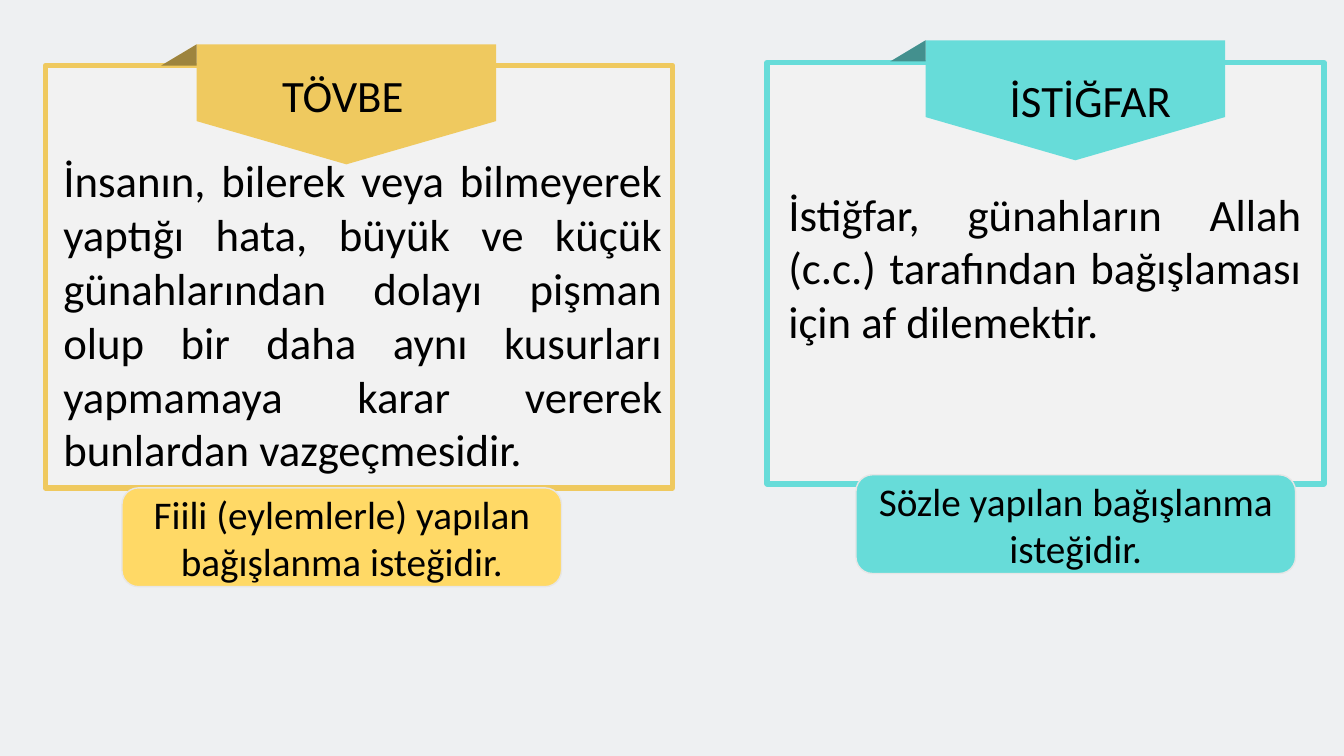
"""Build a slide that sets tövbe and istiğfar side by side."""
from dataclasses import dataclass

from lxml.etree import SubElement
from pptx import Presentation
from pptx.dml.color import RGBColor
from pptx.enum.shapes import MSO_SHAPE as Preset
from pptx.enum.text import MSO_ANCHOR as Anchor, PP_ALIGN as Align
from pptx.oxml.ns import qn
from pptx.shapes.autoshape import Shape
from pptx.slide import Slide
from pptx.text.text import TextFrame
from pptx.util import Inches, Pt


@dataclass(frozen=True)
class Theme:
    """Colours, font and type sizes of the slide."""
    backdrop: str = "EEF0F2"
    panel: str = "F2F2F2"
    gold: str = "EFC95F"
    light_gold: str = "FFD966"
    turquoise: str = "67DCD9"
    hairline: str = "E7E6E6"
    ink: str = "000000"
    font: str = "Calibri"
    body_size: int = 32
    summary_size: int = 28
    frame_width: int = 4
    hairline_width: int = 1
    fold_opacity: int = 34


@dataclass(frozen=True)
class Box:
    """A rectangle in inches."""
    left: float
    top: float
    width: float
    height: float

    def lengths(self) -> tuple[Inches, ...]:
        """Return the four measures as lengths."""
        return tuple(Inches(n) for n in (self.left, self.top, self.width, self.height))


@dataclass(frozen=True)
class Concept:
    """One framed term with its ribbon, definition and summary."""
    term: str
    definition: str
    summary: str
    color: str
    summary_color: str
    frame: Box
    fold: Box
    term_box: Box
    definition_box: Box
    summary_box: Box


THEME = Theme()
RIBBON_WIDTH, RIBBON_HEIGHT, RIBBON_POINT = 2.97, 1.19, 0.36

CONCEPTS = (
    Concept(
        "TÖVBE",
        "İnsanın, bilerek veya bilmeyerek yaptığı hata, büyük ve küçük günahlarından dolayı "
        "pişman olup bir daha aynı kusurları yapmamaya karar vererek bunlardan vazgeçmesidir.",
        "Fiili (eylemlerle) yapılan bağışlanma isteğidir.",
        THEME.gold, THEME.light_gold,
        Box(0.45, 0.65, 6.22, 4.19), Box(1.6, 0.44, 0.35, 0.21),
        Box(2.57, 0.62, 1.66, 0.64), Box(0.53, 1.47, 6.14, 3.33), Box(1.21, 4.84, 4.36, 0.98),
    ),
    Concept(
        "İSTİĞFAR",
        "İstiğfar, günahların Allah (c.c.) tarafından bağışlaması için af dilemektir.",
        "Sözle yapılan bağışlanma isteğidir.",
        THEME.turquoise, THEME.turquoise,
        Box(7.61, 0.62, 5.52, 4.18), Box(8.83, 0.4, 0.35, 0.21),
        Box(9.82, 0.67, 1.99, 0.64), Box(7.72, 1.8, 5.29, 1.72), Box(8.49, 4.71, 4.36, 0.98),
    ),
)


def add_filled(slide: Slide, preset: Preset, box: Box, fill: str,
               line: str | None = None, line_width: int = 0) -> Shape:
    """Add a preset shape with a flat fill and an optional outline."""
    shape = slide.shapes.add_shape(preset, *box.lengths())
    shape.shadow.inherit = False
    shape.fill.solid()
    shape.fill.fore_color.rgb = RGBColor.from_string(fill)
    if line:
        shape.line.color.rgb = RGBColor.from_string(line)
        shape.line.width = Pt(line_width)
    else:
        shape.line.fill.background()
    return shape


def write(frame: TextFrame, wording: str, size: int, align: Align) -> None:
    """Write one run of text into a wrapping text frame."""
    frame.word_wrap = True
    paragraph = frame.paragraphs[0]
    paragraph.alignment = align
    run = paragraph.add_run()
    run.text = wording
    run.font.size = Pt(size)
    run.font.name = THEME.font
    run.font.color.rgb = RGBColor.from_string(THEME.ink)


def add_text(slide: Slide, box: Box, wording: str, align: Align) -> None:
    """Add a text box at body size."""
    write(slide.shapes.add_textbox(*box.lengths()).text_frame, wording, THEME.body_size, align)


def add_ribbon(slide: Slide, fold: Box, color: str) -> None:
    """Add the downward ribbon and its shaded fold."""
    center_x = fold.left + fold.width + RIBBON_WIDTH / 2
    center_y = fold.top + RIBBON_HEIGHT / 2
    unrotated = Box(center_x - RIBBON_HEIGHT / 2, center_y - RIBBON_WIDTH / 2,
                    RIBBON_HEIGHT, RIBBON_WIDTH)
    ribbon = add_filled(slide, Preset.PENTAGON, unrotated, color)
    ribbon.adjustments[0] = RIBBON_POINT
    ribbon.rotation = 90
    for fill, opacity in ((color, 100), (THEME.ink, THEME.fold_opacity)):
        triangle = add_filled(slide, Preset.RIGHT_TRIANGLE, fold, fill)
        properties = triangle._element.spPr
        properties.find(qn("a:xfrm")).set("flipH", "1")
        if opacity < 100:
            shade = properties.find(qn("a:solidFill")).find(qn("a:srgbClr"))
            SubElement(shade, qn("a:alpha")).set("val", str(opacity * 1000))


def add_panel(slide: Slide, concept: Concept) -> None:
    """Add the frame, ribbon and term of a concept."""
    add_filled(slide, Preset.RECTANGLE, concept.frame, THEME.panel,
               concept.color, THEME.frame_width)
    add_ribbon(slide, concept.fold, concept.color)
    add_text(slide, concept.term_box, concept.term, Align.CENTER)


def add_summary(slide: Slide, concept: Concept) -> None:
    """Add the rounded summary of a concept."""
    summary = add_filled(slide, Preset.ROUNDED_RECTANGLE, concept.summary_box,
                         concept.summary_color, THEME.hairline, THEME.hairline_width)
    summary.text_frame.vertical_anchor = Anchor.MIDDLE
    write(summary.text_frame, concept.summary, THEME.summary_size, Align.CENTER)


def main() -> None:
    """Build and save the presentation."""
    deck = Presentation()
    deck.slide_width, deck.slide_height = Inches(13.33), Inches(7.5)
    slide = deck.slides.add_slide(deck.slide_layouts[6])
    slide.background.fill.solid()
    slide.background.fill.fore_color.rgb = RGBColor.from_string(THEME.backdrop)
    for concept in CONCEPTS:
        add_panel(slide, concept)
        add_text(slide, concept.definition_box, concept.definition, Align.JUSTIFY)
        add_summary(slide, concept)
    deck.save("out.pptx")


if __name__ == "__main__":
    main()
